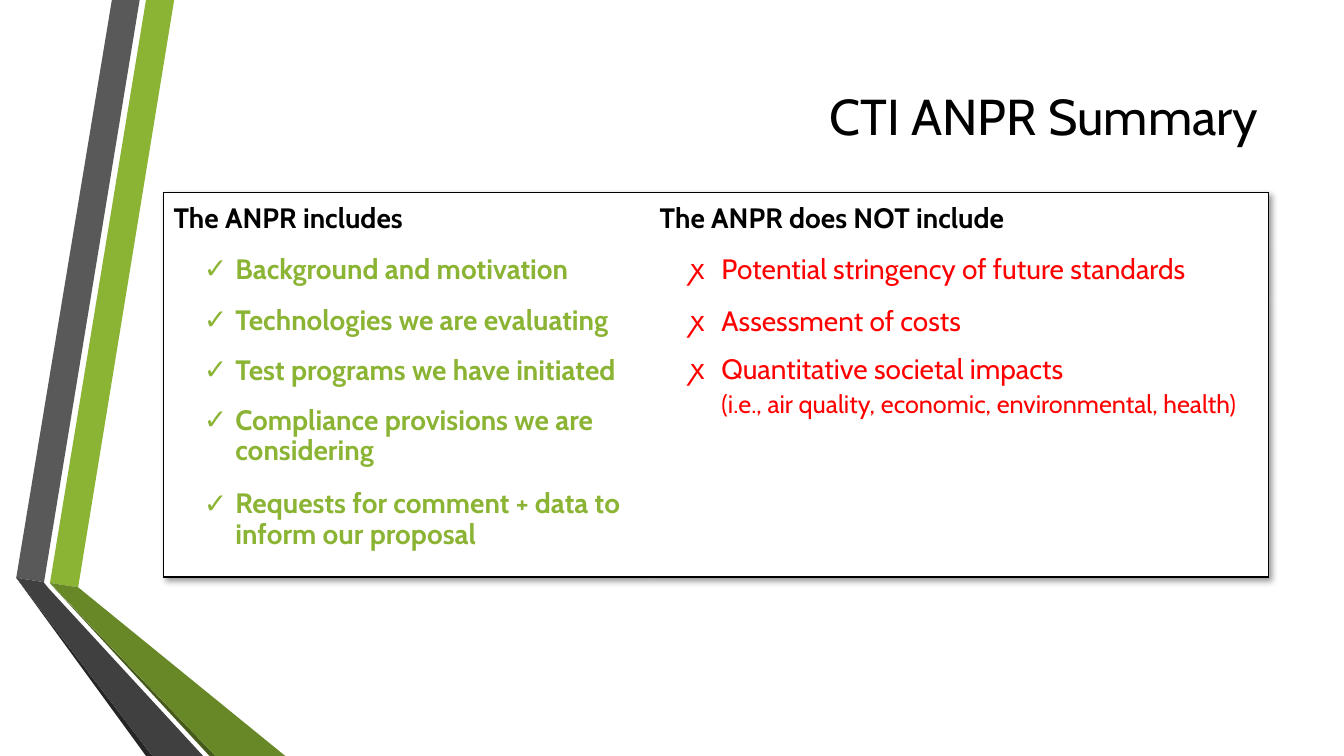
from lxml.etree import SubElement
from pptx import Presentation
from pptx.dml.color import RGBColor
from pptx.enum.text import MSO_ANCHOR as Anchor, PP_ALIGN as Align
from pptx.oxml import parse_xml
from pptx.oxml.ns import nsdecls, qn
from pptx.util import Cm, Pt

BLACK = RGBColor(0x00, 0x00, 0x00)
WHITE = RGBColor(0xFF, 0xFF, 0xFF)
RED = RGBColor(0xFF, 0x00, 0x00)
GREEN = RGBColor(0x8B, 0xB4, 0x34)
DARK_GREEN = RGBColor(0x68, 0x87, 0x27)
DEEP_GREEN = RGBColor(0x46, 0x5A, 0x1A)
GRAY = RGBColor(0x59, 0x59, 0x59)
CHARCOAL = RGBColor(0x40, 0x40, 0x40)
NEAR_BLACK = RGBColor(0x26, 0x26, 0x26)

# Ribbon outlines in centimetres, from back to front
RIBBONS = [
    (GREEN, [(1.26, 14.69), (1.97, 14.8), (4.39, 0), (3.68, 0)]),
    (GRAY, [(3.52, 0), (2.82, 0), (0.41, 14.56), (1.11, 14.67)]),
    (NEAR_BLACK, [(0.41, 14.56), (3.68, 19.05), (3.84, 19.05)]),
    (DEEP_GREEN, [(1.26, 14.7), (5.28, 19.05), (5.43, 19.05)]),
    (DARK_GREEN, [(1.26, 14.69), (5.43, 19.05), (7.19, 19.05), (1.97, 14.8)]),
    (CHARCOAL, [(5.12, 19.05), (1.22, 14.82), (1.1, 14.67), (0.41, 14.56), (3.84, 19.05)]),
]
HEADINGS = ["The ANPR includes", "The ANPR does NOT include"]
INCLUDED = [
    "Background and motivation",
    "Technologies we are evaluating",
    "Test programs we have initiated",
    "Compliance provisions we are considering",
    "Requests for comment + data to inform our proposal",
]
EXCLUDED = [
    "Potential stringency of future standards",
    "Assessment of costs",
    "Quantitative societal impacts",
]
IMPACT_EXAMPLES = "(i.e., air quality, economic, environmental, health)"
COLUMN_WIDTHS = [12.25, 15.59]
ROW_HEIGHTS = [1.3, 1.3, 1.3, 1.19, 2.11, 2.11, 0.38]


class SlideBuilder:
    font_name = "Cabin"
    hanging = Cm(0.79)

    def __init__(self, presentation):
        self.slide = presentation.slides.add_slide(presentation.slide_layouts[5])

    def style(self, paragraph, size, color, bold=False):
        font = paragraph.font
        font.name, font.size, font.bold = self.font_name, Pt(size), bold
        font.color.rgb = color

    def title(self, text, left, top, width, height):
        title = self.slide.shapes.title
        title.left, title.top = Cm(left), Cm(top)
        title.width, title.height = Cm(width), Cm(height)
        frame = title.text_frame
        frame.text = text
        frame.vertical_anchor = Anchor.BOTTOM
        frame.paragraphs[0].alignment = Align.RIGHT
        self.style(frame.paragraphs[0], 36, BLACK)

    def ribbon(self, color, points):
        corners = [(Cm(x), Cm(y)) for x, y in points]
        builder = self.slide.shapes.build_freeform(*corners[0])
        builder.add_line_segments(corners[1:], close=True)
        shape = builder.convert_to_shape()
        shape.shadow.inherit = False
        shape.fill.solid()
        shape.fill.fore_color.rgb = color
        shape.line.fill.background()

    def table(self, left, top, widths, heights):
        """Add a white table with a black frame and a soft shadow."""
        frame = self.slide.shapes.add_table(
            len(heights), len(widths), Cm(left), Cm(top), Cm(sum(widths)), Cm(sum(heights)))
        table = frame.table
        table.first_row = table.horz_banding = False
        for column, width in zip(table.columns, widths):
            column.width = Cm(width)
        for row, height in zip(table.rows, heights):
            row.height = Cm(height)
        last_row, last_column = len(heights) - 1, len(widths) - 1
        for r in range(len(heights)):
            for c in range(len(widths)):
                cell = table.cell(r, c)
                cell.fill.solid()
                cell.fill.fore_color.rgb = WHITE
                cell.vertical_anchor = Anchor.MIDDLE
                self.borders(cell, {"lnL": c == 0, "lnR": c == last_column,
                                    "lnT": r == 0, "lnB": r == last_row})
        table._tbl.tblPr.insert(0, parse_xml(
            f'<a:effectLst {nsdecls("a")}><a:outerShdw blurRad="50800" dist="38100" '
            'dir="2700000" algn="tl" rotWithShape="0"><a:srgbClr val="000000">'
            '<a:alpha val="40000"/></a:srgbClr></a:outerShdw></a:effectLst>'))
        return table

    def borders(self, cell, sides):
        """Draw the outer sides of a cell and clear its inner ones."""
        properties = cell._tc.get_or_add_tcPr()
        solid = f'<a:solidFill><a:srgbClr val="{BLACK}"/></a:solidFill>'
        for position, (side, outer) in enumerate(sides.items()):
            properties.insert(position, parse_xml(
                f'<a:{side} {nsdecls("a")} w="{Pt(1)}">'
                f'{solid if outer else "<a:noFill/>"}</a:{side}>'))

    def heading(self, cell, text):
        cell.text = text
        self.style(cell.text_frame.paragraphs[0], 20, BLACK, bold=True)

    def bullet(self, cell, text, mark, color, bold=False):
        cell.margin_left = Cm(1.02)
        cell.text = text
        paragraph = cell.text_frame.paragraphs[0]
        self.indent(paragraph, -self.hanging)
        properties = paragraph._p.pPr
        SubElement(properties, qn("a:buFont"), typeface=self.font_name)
        SubElement(properties, qn("a:buChar"), char=mark)
        self.style(paragraph, 20, color, bold)
        return paragraph

    def indent(self, paragraph, first_line):
        properties = paragraph._p.get_or_add_pPr()
        properties.set("marL", str(self.hanging))
        properties.set("indent", str(first_line))

    def thin(self, cell):
        """Keep an empty cell from growing its row."""
        cell.margin_top = cell.margin_bottom = 0
        SubElement(cell.text_frame.paragraphs[0]._p, qn("a:endParaRPr"), sz="400")


def main():
    presentation = Presentation()
    presentation.slide_width, presentation.slide_height = Cm(33.87), Cm(19.05)
    builder = SlideBuilder(presentation)
    for color, points in RIBBONS:
        builder.ribbon(color, points)
    builder.title("CTI ANPR Summary", 4.12, 1.91, 27.84, 1.88)

    table = builder.table(4.12, 4.85, COLUMN_WIDTHS, ROW_HEIGHTS)
    table.cell(3, 1).merge(table.cell(4, 1))
    for column, text in enumerate(HEADINGS):
        builder.heading(table.cell(0, column), text)
        builder.thin(table.cell(len(ROW_HEIGHTS) - 1, column))
    for row, text in enumerate(INCLUDED, start=1):
        paragraph = builder.bullet(table.cell(row, 0), text, "✓", GREEN, bold=True)
        paragraph.line_spacing = 0.9
        paragraph.space_before = Pt(5)
    for row, text in enumerate(EXCLUDED, start=1):
        builder.bullet(table.cell(row, 1), text, "ꭗ", RED)

    impacts = table.cell(3, 1)
    impacts.vertical_anchor = Anchor.TOP
    examples = impacts.text_frame.add_paragraph()
    examples.text = IMPACT_EXAMPLES
    examples.space_before = Pt(2)
    builder.indent(examples, 0)
    builder.style(examples, 18, RED)

    presentation.save("out.pptx")


if __name__ == "__main__":
    main()
